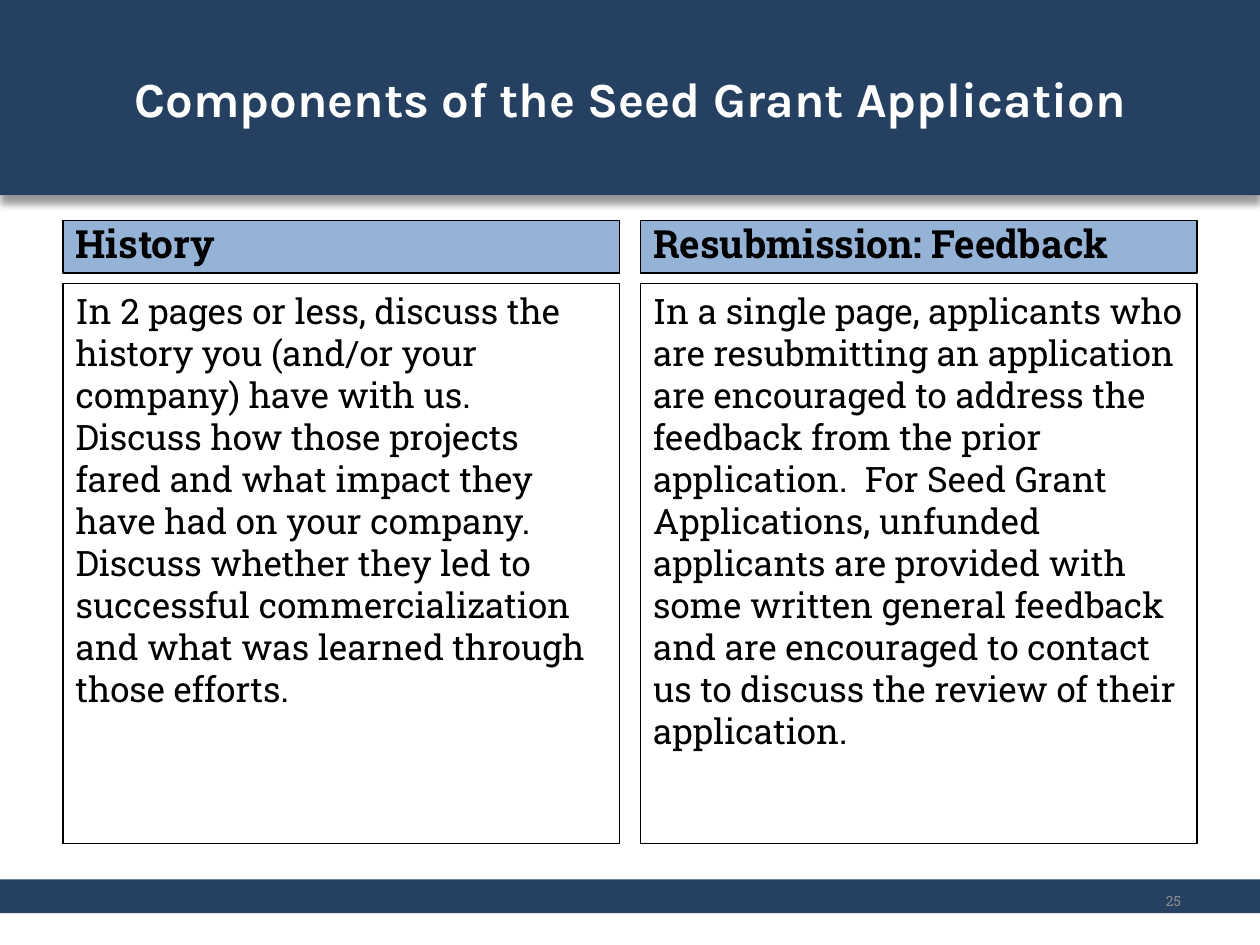
from lxml.etree import SubElement
from pptx import Presentation
from pptx.dml.color import RGBColor
from pptx.enum.shapes import MSO_SHAPE
from pptx.enum.text import MSO_ANCHOR, MSO_AUTO_SIZE, PP_ALIGN
from pptx.oxml import parse_xml
from pptx.oxml.ns import nsdecls, qn
from pptx.util import Pt

COLORS = {
    "navy": "254061",
    "sky": "95B3D7",
    "ink": "000000",
    "paper": "FFFFFF",
    "muted": "8C8C8C",
}
TITLE_FONT, BODY_FONT = "Karla", "Roboto Slab"
WIDTH, HEIGHT = 720, 540
MARGIN, GUTTER = 36, 12
COLUMN_WIDTH = (WIDTH - 2 * MARGIN - GUTTER) / 2
COLUMN_TOP, COLUMN_HEIGHT = 126, 356
HEADING_HEIGHT, HEADING_GAP = 30, 6

COLUMNS = [
    ("History",
     "In 2 pages or less, discuss the history you (and/or your company) have "
     "with us.  Discuss how those projects fared and what impact they have "
     "had on your company.  Discuss whether they led to successful "
     "commercialization and what was learned through those efforts."),
    ("Resubmission: Feedback",
     "In a single page, applicants who are resubmitting an application are "
     "encouraged to address the feedback from the prior application.  For "
     "Seed Grant Applications, unfunded applicants are provided with some "
     "written general feedback and are encouraged to contact us to discuss "
     "the review of their application."),
]


def rgb(name):
    return RGBColor.from_string(COLORS[name])


def place(part, left, top, width, height):
    part.left, part.top = Pt(left), Pt(top)
    part.width, part.height = Pt(width), Pt(height)


def paint(part, fill=None, line=None):
    if fill:
        part.fill.solid()
        part.fill.fore_color.rgb = rgb(fill)
    else:
        part.fill.background()
    if line:
        part.line.color.rgb = rgb(line)
        part.line.width = Pt(0.75)
    else:
        part.line.fill.background()


def write(part, text, font, size, color, bold=False,
          align=PP_ALIGN.LEFT, anchor=MSO_ANCHOR.TOP):
    """Set one unbulleted paragraph and return it."""
    frame = part.text_frame
    frame.text = text
    frame.word_wrap = True
    frame.auto_size = MSO_AUTO_SIZE.NONE
    frame.vertical_anchor = anchor
    paragraph = frame.paragraphs[0]
    properties = paragraph._p.get_or_add_pPr()
    properties.set("marL", "0")
    properties.set("indent", "0")
    SubElement(properties, qn("a:buNone"))
    paragraph.alignment = align
    paragraph.space_before = Pt(0)
    run_font = paragraph.runs[0].font
    run_font.name, run_font.size, run_font.bold = font, Pt(size), bold
    run_font.color.rgb = rgb(color)
    return paragraph


def add_drop_shadow(part):
    part.element.spPr.append(parse_xml(
        f'<a:effectLst {nsdecls("a")}>'
        f'<a:outerShdw blurRad="{Pt(4)}" dist="{Pt(5)}" dir="5400000" '
        f'algn="t" rotWithShape="0"><a:srgbClr val="{COLORS["ink"]}">'
        '<a:alpha val="40000"/></a:srgbClr></a:outerShdw></a:effectLst>'))


def build_title(title, left, top, width, height):
    place(title, left, top, width, height)
    paint(title, "navy")
    add_drop_shadow(title)
    write(title, "Components of the Seed Grant Application", TITLE_FONT, 28,
          "paper", True, PP_ALIGN.CENTER, MSO_ANCHOR.MIDDLE)


def build_column(heading, body, texts, left, top, width, height):
    heading_text, body_text = texts
    place(heading, left, top, width, HEADING_HEIGHT)
    paint(heading, "sky", "ink")
    write(heading, heading_text, BODY_FONT, 22.2, "ink", True,
          anchor=MSO_ANCHOR.BOTTOM)

    offset = HEADING_HEIGHT + HEADING_GAP
    place(body, left, top + offset, width, height - offset)
    paint(body, line="ink")
    paragraph = write(body, body_text, BODY_FONT, 20, "ink")
    paragraph.line_spacing = Pt(24)


def build_footer(slide, left, top, width, height):
    band = slide.shapes.add_shape(MSO_SHAPE.RECTANGLE, Pt(left), Pt(top),
                                  Pt(width), Pt(height))
    band.shadow.inherit = False
    paint(band, "navy")
    number_width = 168
    number = slide.shapes.add_textbox(
        Pt(left + width - MARGIN - number_width), Pt(top - 2),
        Pt(number_width), Pt(28.75))
    write(number, "25 ", BODY_FONT, 8, "muted",
          align=PP_ALIGN.RIGHT, anchor=MSO_ANCHOR.MIDDLE)


def main():
    presentation = Presentation()
    presentation.slide_width, presentation.slide_height = Pt(WIDTH), Pt(HEIGHT)
    comparison = presentation.slide_layouts.get_by_name("Comparison")
    slide = presentation.slides.add_slide(comparison)

    title, *column_parts = slide.placeholders
    build_title(title, 0, 0, WIDTH, 111.5)
    pairs = zip(column_parts[::2], column_parts[1::2], COLUMNS)
    for index, (heading, body, texts) in enumerate(pairs):
        left = MARGIN + index * (COLUMN_WIDTH + GUTTER)
        build_column(heading, body, texts, left, COLUMN_TOP,
                     COLUMN_WIDTH, COLUMN_HEIGHT)
    build_footer(slide, 0, 502.5, WIDTH, 19.25)

    presentation.save("out.pptx")


if __name__ == "__main__":
    main()
